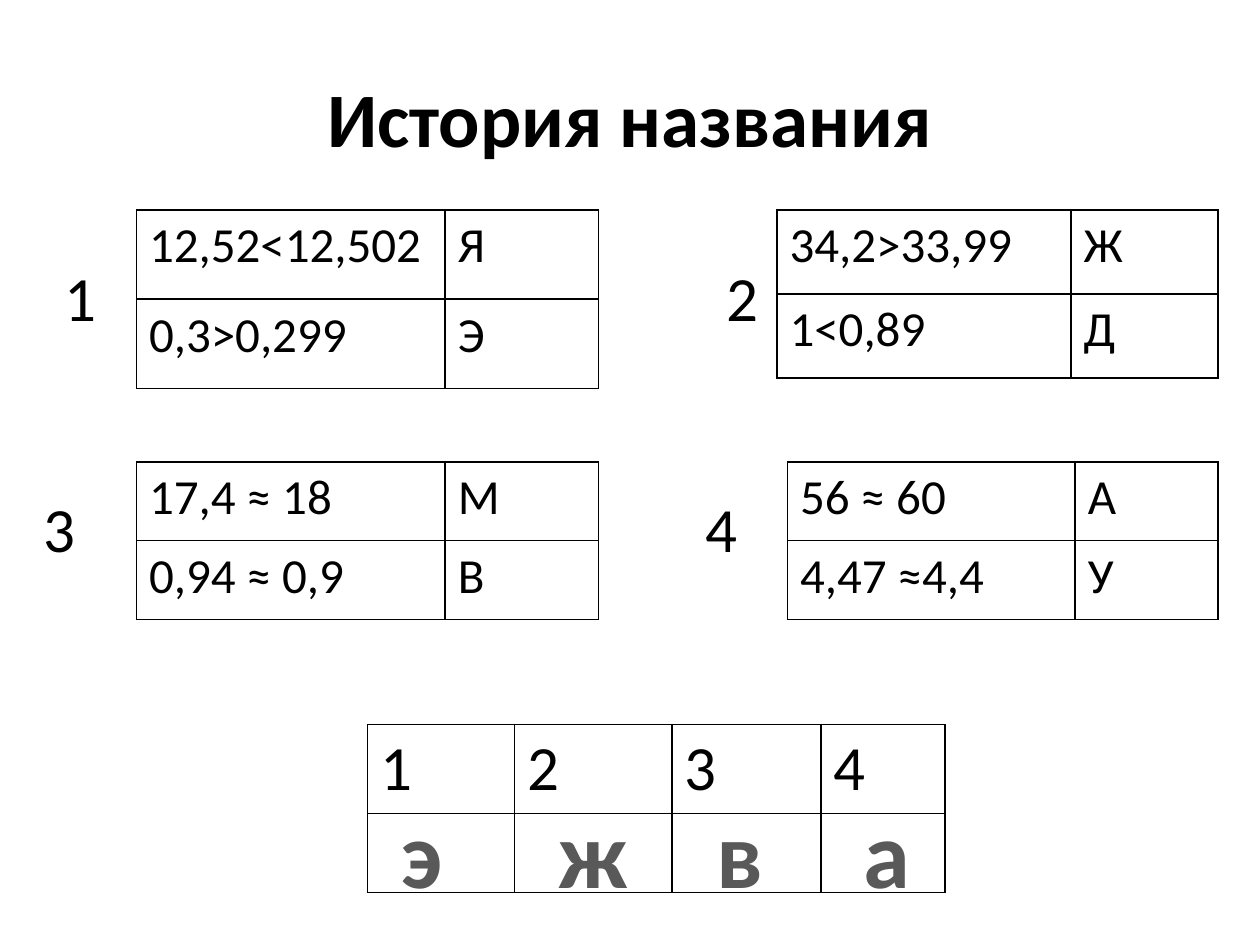
import dataclasses

import lxml.etree
import pptx
import pptx.dml.color
import pptx.enum.text
import pptx.oxml.ns
import pptx.util

PX = 7620


@dataclasses.dataclass(frozen=True)
class Theme:
    """Colours, font and type sizes of the slide."""

    font: str = "Calibri"
    ink: str = "000000"
    accent: str = "595959"
    title: int = 44
    number: int = 36
    cell: int = 28
    letter: int = 54
    border: int = 12700


@dataclasses.dataclass(frozen=True)
class Box:
    """A rectangle in px."""

    x: int
    y: int
    w: int
    h: int

    def inner(self, dx, dy, w, h):
        """Return a box placed relative to this one."""
        return Box(self.x + dx, self.y + dy, w, h)

    def emu(self):
        """Return left, top, width and height in EMU."""
        return [pptx.util.Emu(v * PX) for v in (self.x, self.y, self.w, self.h)]


THEME = Theme()
ALIGN = pptx.enum.text.PP_ALIGN
QUESTIONS = [
    ("1", Box(130, 200, 440, 170), (-80, 40, 100, 85),
     [("12,52<12,502", "Я"), ("0,3>0,299", "Э")]),
    ("2", Box(740, 200, 420, 160), (-60, 40, 80, 85),
     [("34,2>33,99", "Ж"), ("1<0,89", "Д")]),
    ("3", Box(130, 440, 440, 150), (-100, 20, 100, 85),
     [("17,4 ≈ 18", "М"), ("0,94 ≈ 0,9", "В")]),
    ("4", Box(750, 440, 410, 150), (-90, 20, 80, 85),
     [("56 ≈ 60", "А"), ("4,47 ≈4,4", "У")]),
]
ANSWERS = [("1", "э", 140, 20, 64), ("2", "ж", 150, 170, 91),
           ("3", "в", 142, 320, 70), ("4", "а", 118, 460, 70)]


def write(tf, text, size, color=THEME.ink, bold=False, align=ALIGN.LEFT):
    """Put one formatted run in a text frame."""
    p = tf.paragraphs[0]
    p.alignment = align
    r = p.add_run()
    r.text = text
    formats = {"name": THEME.font, "size": pptx.util.Pt(size), "bold": bold}
    for name, value in formats.items():
        setattr(r.font, name, value)
    r.font.color.rgb = pptx.dml.color.RGBColor.from_string(color)


def add_label(s, box, text, size, wrap=True, **formats):
    """Add a text box with one run."""
    tf = s.shapes.add_textbox(*box.emu()).text_frame
    tf.word_wrap = wrap
    write(tf, text, size, **formats)


def style_cell(cell):
    """Clear the cell fill and draw its four borders."""
    qn = pptx.oxml.ns.qn
    tc_pr = cell._tc.get_or_add_tcPr()
    for side in ("lnL", "lnR", "lnT", "lnB"):
        ln = lxml.etree.SubElement(tc_pr, qn(f"a:{side}"), w=str(THEME.border))
        fill = lxml.etree.SubElement(ln, qn("a:solidFill"))
        lxml.etree.SubElement(fill, qn("a:srgbClr"), val=THEME.ink)
    cell.fill.background()


def add_grid(s, box, widths, heights, rows, size):
    """Add a bordered table filled with rows of text."""
    table = s.shapes.add_table(len(heights), len(widths), *box.emu()).table
    for name in ("first_row", "horz_banding"):
        setattr(table, name, False)
    for column, width in zip(table.columns, widths):
        column.width = pptx.util.Emu(width * PX)
    for row, height in zip(table.rows, heights):
        row.height = pptx.util.Emu(height * PX)
    for cell in table.iter_cells():
        style_cell(cell)
    for i, row in enumerate(rows):
        for j, text in enumerate(row):
            write(table.cell(i, j).text_frame, text, size)


def add_title(s, box, text):
    """Place and fill the title placeholder."""
    sp = s.shapes.title
    sp.left, sp.top, sp.width, sp.height = box.emu()
    write(sp.text_frame, text, THEME.title, bold=True, align=ALIGN.CENTER)


def add_question(s, box, number, label, rows):
    """Add a numbered table of statements and their letters."""
    letter_w = box.w // 3
    add_grid(s, box, [box.w - letter_w, letter_w], [box.h // 2] * 2,
             rows, THEME.cell)
    add_label(s, box.inner(*label), number, THEME.number)


def add_answers(s, box):
    """Add the answer table with the letters over its lower row."""
    numbers, letters, widths, offsets, letter_ws = zip(*ANSWERS)
    add_grid(s, box, widths, [85, 75], [numbers], THEME.number)
    for letter, dx, w in zip(letters, offsets, letter_ws):
        add_label(s, box.inner(dx, 60, w, 121), letter, THEME.letter, wrap=False,
                  color=THEME.accent, bold=True, align=ALIGN.CENTER)


def main():
    """Build and save the slide."""
    prs = pptx.Presentation()
    prs.slide_width, prs.slide_height = Box(0, 0, 1200, 900).emu()[2:]
    s = prs.slides.add_slide(prs.slide_layouts[5])
    add_title(s, Box(60, 36, 1080, 150), "История названия")
    for number, box, label, rows in QUESTIONS:
        add_question(s, box, number, label, rows)
    add_answers(s, Box(350, 690, 550, 160))
    prs.save("out.pptx")


if __name__ == "__main__":
    main()
